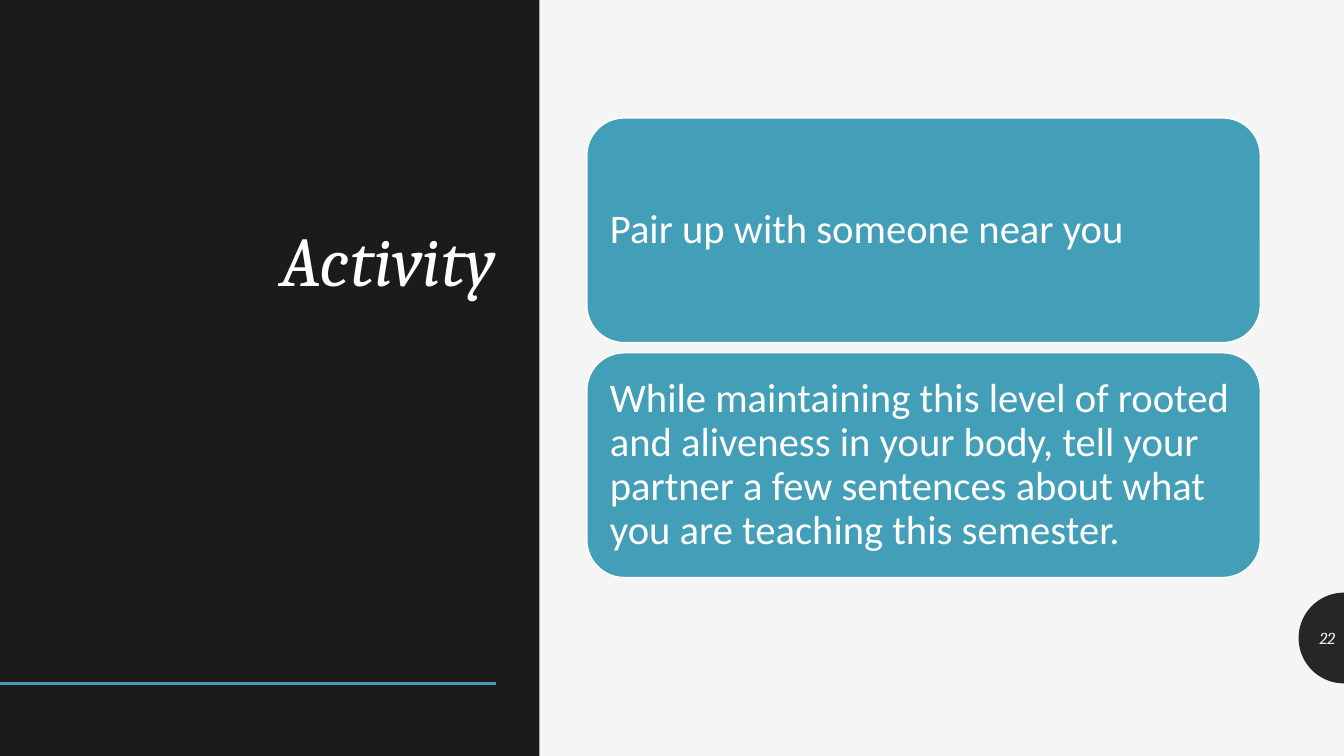
from math import cos, pi, sin

from lxml import etree
from pptx import Presentation
from pptx.dml.color import RGBColor
from pptx.enum.shapes import MSO_CONNECTOR, MSO_SHAPE
from pptx.enum.text import MSO_ANCHOR, PP_ALIGN
from pptx.oxml.ns import qn
from pptx.util import Inches, Pt

STRAIGHT = MSO_CONNECTOR.STRAIGHT
RECTANGLE = MSO_SHAPE.RECTANGLE
ROUNDED = MSO_SHAPE.ROUNDED_RECTANGLE
MIDDLE = MSO_ANCHOR.MIDDLE
BOTTOM = MSO_ANCHOR.BOTTOM
LEFT = PP_ALIGN.LEFT
RIGHT = PP_ALIGN.RIGHT

WIDTH, HEIGHT = 13.33, 7.5
PAPER, WHITE, TEAL = "F5F5F5", "FFFFFF", "439EB7"
PANEL, TAB = "1D1A1D", "262626"
CARD_TOP, CARD_STEP = 1.17, 2.33
STEPS = [
    "Pair up with someone near you",
    "While maintaining this level of rooted and aliveness in your body, "
    "tell your partner a few sentences about what you are teaching this semester.",
]


def color(value):
    return RGBColor.from_string(value)


def paint(shape, fill, line=None):
    shape.shadow.inherit = False
    shape.fill.solid()
    shape.fill.fore_color.rgb = color(fill)
    if line:
        shape.line.color.rgb = color(line)
        shape.line.width = Pt(1)
    else:
        shape.line.fill.background()


def write(shape, text, size, font, ink, anchor, align, italic=False, spacing=1.0):
    frame = shape.text_frame
    frame.word_wrap = True
    frame.vertical_anchor = anchor
    para = frame.paragraphs[0]
    para.alignment = align
    para.line_spacing = spacing
    span = para.add_run()
    span.text = text
    span.font.size = Pt(size)
    span.font.name = font
    span.font.italic = italic
    span.font.color.rgb = color(ink)


def add_block(page, kind, left, top, width, height, fill, line=None):
    block = page.shapes.add_shape(
        kind, Inches(left), Inches(top), Inches(width), Inches(height)
    )
    paint(block, fill, line)
    return block


def add_label(page, left, top, width, height, text, size, ink, anchor, spacing=1.0):
    box = page.shapes.add_textbox(
        Inches(left), Inches(top), Inches(width), Inches(height)
    )
    write(box, text, size, "Cambria", ink, anchor, RIGHT, True, spacing)


def add_card(page, top, text):
    card = add_block(page, ROUNDED, 5.82, top, 6.68, 2.23, TEAL, WHITE)
    frame = card.text_frame
    frame.margin_left = frame.margin_right = Inches(0.12)
    frame.margin_top = frame.margin_bottom = Inches(0.12)
    write(card, text, 29, "Calibri", WHITE, MIDDLE, LEFT, spacing=0.9)


def add_rule(page, left, right, top):
    rule = page.shapes.add_connector(
        STRAIGHT, Inches(left), Inches(top), Inches(right), Inches(top)
    )
    rule.line.color.rgb = color(TEAL)
    rule.line.width = Pt(2)
    etree.SubElement(rule._element.spPr, qn("a:effectLst"))


def add_half_disc(page, center_x, center_y, radius, sides=48):
    angles = [pi * step / sides for step in range(sides + 1)]
    points = [
        (Inches(center_x - radius * sin(angle)), Inches(center_y - radius * cos(angle)))
        for angle in angles
    ]
    builder = page.shapes.build_freeform(*points[0])
    builder.add_line_segments(points[1:], close=True)
    paint(builder.convert_to_shape(), TAB)


def main():
    deck = Presentation()
    deck.slide_width, deck.slide_height = Inches(WIDTH), Inches(HEIGHT)
    page = deck.slides.add_slide(deck.slide_layouts[6])
    page.background.fill.solid()
    page.background.fill.fore_color.rgb = color(PAPER)

    add_half_disc(page, WIDTH, 6.33, 0.45)
    add_block(page, RECTANGLE, 0, 0, 5.35, HEIGHT, PANEL)
    add_rule(page, 0, 4.92, 6.78)
    add_label(page, 0.83, 0.61, 4.19, 2.43, "Activity", 50, WHITE, BOTTOM, 0.9)
    add_label(page, 12.89, 6.13, 0.45, 0.4, "22", 12, PAPER, MIDDLE)
    for index, text in enumerate(STEPS):
        add_card(page, CARD_TOP + index * CARD_STEP, text)

    deck.save("out.pptx")


if __name__ == "__main__":
    main()
